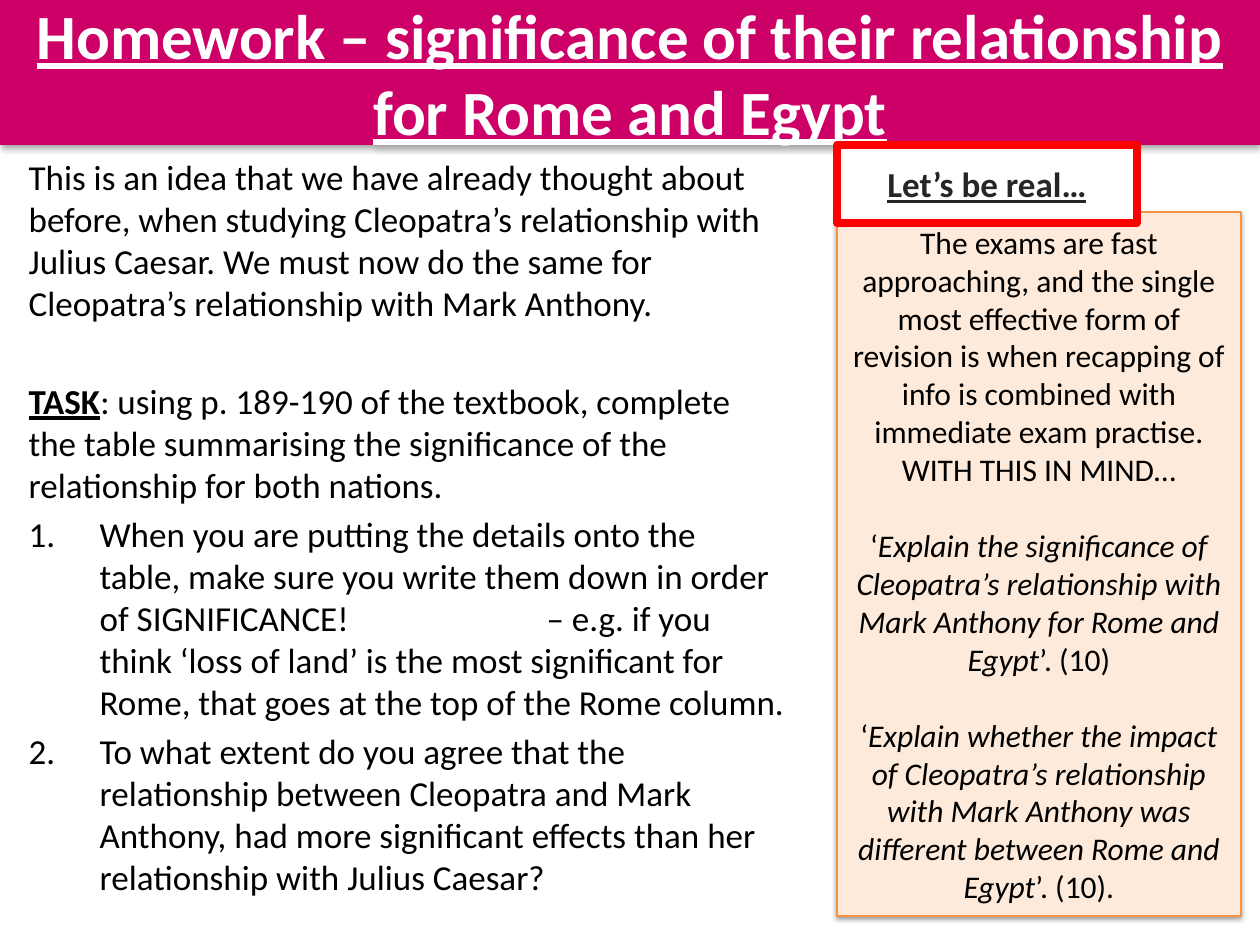
from lxml.etree import SubElement
from pptx import Presentation
from pptx.dml.color import RGBColor
from pptx.enum.shapes import MSO_SHAPE
from pptx.enum.text import MSO_ANCHOR, MSO_AUTO_SIZE, PP_ALIGN
from pptx.oxml.ns import qn
from pptx.util import Emu, Pt

FONT = "Calibri"
MAGENTA = RGBColor(0xCC, 0x00, 0x66)
PEACH = RGBColor(0xFD, 0xEA, 0xDA)
ORANGE = RGBColor(0xF6, 0x92, 0x40)
RED = RGBColor(0xFF, 0x00, 0x00)
WHITE = RGBColor(0xFF, 0xFF, 0xFF)
BLACK = RGBColor(0x00, 0x00, 0x00)
CHARCOAL = RGBColor(0x26, 0x26, 0x26)

# Runs are (text, style): b bold, u underlined, i italic.
# Paragraphs are (runs, points of space before or None, numbered).
TITLE = [([("Homework – significance of their relationship for Rome and Egypt", "bu")],
          None, False)]
TASKS = [
    ([("This is an idea that we have already thought about before, when studying "
       "Cleopatra’s relationship with Julius Caesar. We must now do the same for "
       "Cleopatra’s relationship with Mark Anthony.", "")], None, False),
    ([("TASK", "bu"),
      (": using p. 189-190 of the textbook, complete the table summarising the "
       "significance of the relationship for both nations.", "")], 32, False),
    ([("When you are putting the details onto the table, make sure you write them "
       "down in order of SIGNIFICANCE!\t– e.g. if you think ‘loss of land’ is the "
       "most significant for Rome, that goes at the top of the Rome column.", "")],
     None, True),
    ([("To what extent do you agree that the relationship between Cleopatra and "
       "Mark Anthony, had more significant effects than her relationship with "
       "Julius Caesar?", "")], None, True),
]
EXAM = [
    ([("The exams are fast approaching, and the single most effective form of "
       "revision is when recapping of info is combined with immediate exam "
       "practise.", "")], None, False),
    ([("WITH THIS IN MIND…", "")], None, False),
    ([("‘", ""),
      ("Explain the significance of Cleopatra’s relationship with Mark Anthony "
       "for Rome and Egypt", "i"), ("’. (10)", "")], 22, False),
    ([("‘", ""),
      ("Explain whether the impact of Cleopatra’s relationship with Mark Anthony "
       "was different between Rome and Egypt", "i"), ("’. (10).", "")], 22, False),
]
REAL = [([("Let’s be real…", "bu")], None, False)]

# left, top, width, height in px
SLIDE = (1260, 945)
TITLE_BOX = (0, 0, 1260, 145)
TASK_BOX = (16, 149, 781, 747)
EXAM_BOX = (837, 212, 404, 704)
REAL_BOX = (837, 145, 300, 78)
NUMBER_INDENT = 71
EXAMPLE_TAB = 518


def px(n):
    return Emu(round(n * 914400 / 126))


def place(shape, box):
    shape.left, shape.top, shape.width, shape.height = map(px, box)


def set_marker(paragraph, numbered):
    """Number the paragraph with a hanging indent, or clear its bullet."""
    props = paragraph._p.get_or_add_pPr()
    indent = px(NUMBER_INDENT) if numbered else 0
    props.set("marL", str(indent))
    props.set("indent", str(-indent))
    if numbered:
        SubElement(props, qn("a:buFont"), typeface="+mj-lt")
        SubElement(props, qn("a:buAutoNum"), type="arabicPeriod")
        tabs = SubElement(props, qn("a:tabLst"))
        SubElement(tabs, qn("a:tab"), pos=str(px(EXAMPLE_TAB)), algn="l")
    else:
        SubElement(props, qn("a:buNone"))


def write(shape, paragraphs, size, color, align, anchor=MSO_ANCHOR.MIDDLE):
    frame = shape.text_frame
    frame.word_wrap = True
    frame.auto_size = MSO_AUTO_SIZE.NONE
    frame.vertical_anchor = anchor
    for n, (runs, space, numbered) in enumerate(paragraphs):
        paragraph = frame.paragraphs[0] if n == 0 else frame.add_paragraph()
        paragraph.alignment = align
        if space is not None:
            paragraph.space_before = Pt(space)
        set_marker(paragraph, numbered)
        for text, style in runs:
            run = paragraph.add_run()
            run.text = text
            font = run.font
            font.name, font.size, font.color.rgb = FONT, Pt(size), color
            font.bold, font.underline, font.italic = (s in style for s in "bui")


def paint(shape, fill, line=None, width=0):
    shape.shadow.inherit = False
    shape.fill.solid()
    shape.fill.fore_color.rgb = fill
    if line is None:
        shape.line.fill.background()
    else:
        shape.line.color.rgb = line
        shape.line.width = Pt(width)


def drop_shadow(shape, opacity, distance):
    effects = shape._element.spPr.find(qn("a:effectLst"))
    shadow = SubElement(effects, qn("a:outerShdw"), blurRad=str(Pt(3.1)),
                        dist=str(Pt(distance)), dir="5400000", rotWithShape="0")
    tint = SubElement(shadow, qn("a:srgbClr"), val="000000")
    SubElement(tint, qn("a:alpha"), val=str(opacity * 1000))


def add_box(slide, box, *colors):
    shape = slide.shapes.add_shape(MSO_SHAPE.RECTANGLE, *map(px, box))
    paint(shape, *colors)
    return shape


def main():
    deck = Presentation()
    deck.slide_width, deck.slide_height = map(px, SLIDE)
    slide = deck.slides.add_slide(deck.slide_layouts[1])

    title = slide.shapes.title
    place(title, TITLE_BOX)
    paint(title, MAGENTA)
    drop_shadow(title, 35, 1.8)
    write(title, TITLE, 36, WHITE, PP_ALIGN.CENTER)

    tasks = slide.placeholders[1]
    place(tasks, TASK_BOX)
    write(tasks, TASKS, 20, BLACK, PP_ALIGN.LEFT, MSO_ANCHOR.TOP)

    exam = add_box(slide, EXAM_BOX, PEACH, ORANGE, 0.75)
    drop_shadow(exam, 38, 1.6)
    write(exam, EXAM, 18, BLACK, PP_ALIGN.CENTER)

    real = add_box(slide, REAL_BOX, WHITE, RED, 4.5)
    write(real, REAL, 20, CHARCOAL, PP_ALIGN.CENTER)

    deck.save("out.pptx")


if __name__ == "__main__":
    main()
